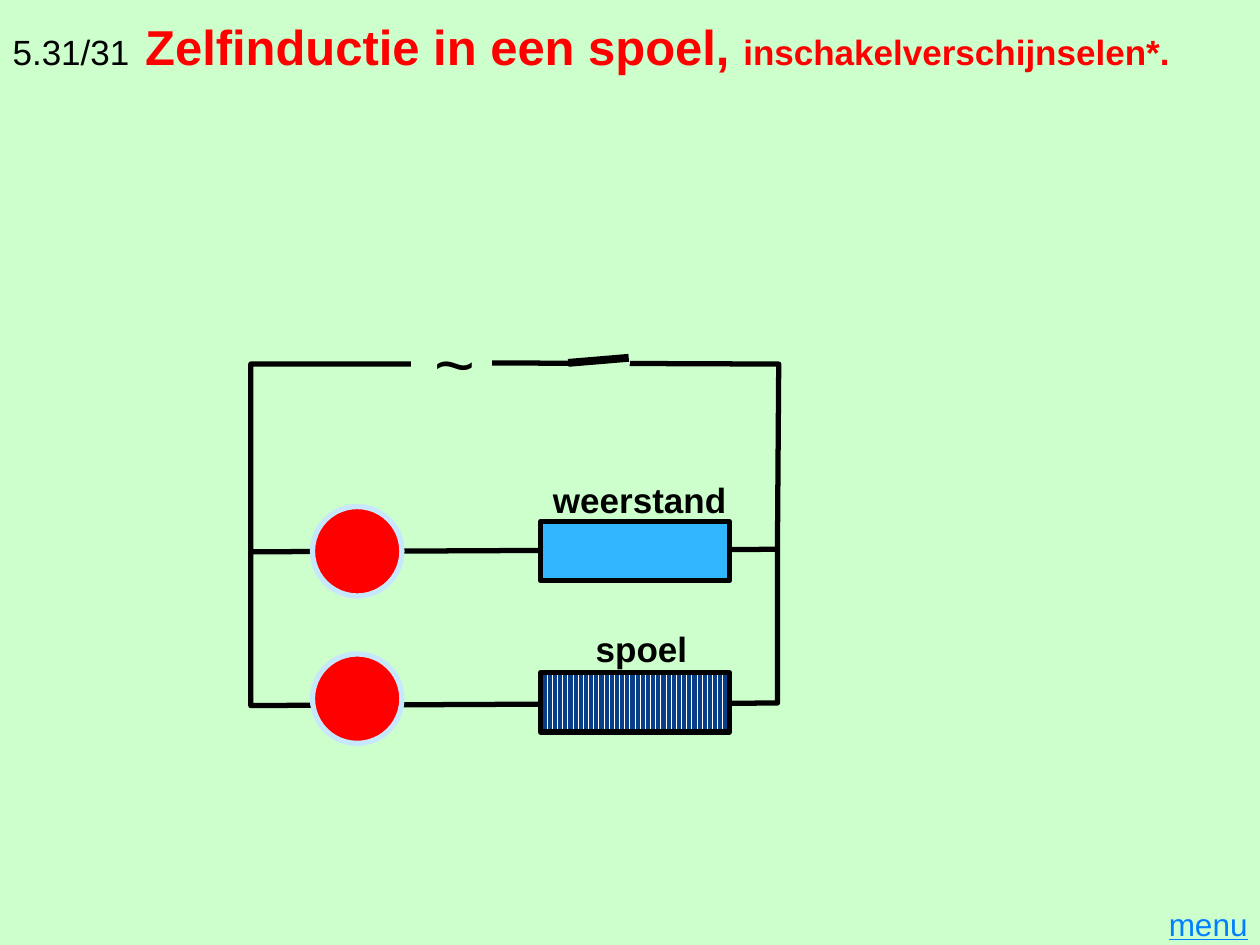
"""Builds a slide with a circuit of a resistor and a coil in parallel, each with its lamp."""
from lxml import etree
from pptx import Presentation, util as u
from pptx.dml import color
from pptx.enum import dml, shapes, text
from pptx.oxml import ns

INK, GROUND, RED, HALO = "000000", "CCFFCC", "FF0000", "C6E7FC"


def rgb(value):
    return color.RGBColor.from_string(value)


def finish(part, fill, line, width):
    part.shadow.inherit = False
    if fill:
        part.fill.solid()
        part.fill.fore_color.rgb = rgb(fill)
    else:
        part.fill.background()
    if line:
        part.line.color.rgb = rgb(line)
        part.line.width = u.Pt(width)
    else:
        part.line.fill.background()


deck = Presentation()
deck.slide_width, deck.slide_height = u.Inches(10), u.Inches(7.5)
slide = deck.slides.add_slide(deck.slide_layouts[5])
slide.background.fill.solid()
slide.background.fill.fore_color.rgb = rgb(GROUND)

left, right, top = 1.99, 6.17, 2.89
loops = [
    [(3.66, 2.88), (6.18, top), (right, 4.36), (left, 4.38), (left, top), (3.43, top)],
    [(left, 4.38), (left, 5.6), (right, 5.58), (right, 4.36)],
]
for loop in loops:
    start, *corners = [(u.Inches(x), u.Inches(y)) for x, y in loop]
    builder = slide.shapes.build_freeform(*start)
    builder.add_line_segments(corners, close=False)
    finish(builder.convert_to_shape(), None, INK, 3)

OVAL, BOX = shapes.MSO_SHAPE.OVAL, shapes.MSO_SHAPE.RECTANGLE
components = [
    (BOX, 4.29, 4.14, 1.5, 0.47, "31B6FD", INK, 3, 0),
    (BOX, 3.27, 2.1, 0.63, 1.5, GROUND, GROUND, 0.75, 0),
    (BOX, 4.52, 2.5, 0.48, 0.71, GROUND, None, 0, 3),
    (OVAL, 2.48, 5.19, 0.71, 0.71, RED, HALO, 3, 0),
    (OVAL, 2.48, 4.02, 0.71, 0.71, RED, HALO, 3, 0),
    (BOX, 4.29, 5.34, 1.5, 0.47, "073E87", INK, 3, 0),
]
for kind, x, y, width, height, fill, line, weight, turn in components:
    component = slide.shapes.add_shape(kind, *map(u.Inches, (x, y, width, height)))
    finish(component, fill, line, weight)
    component.rotation = turn

coil = component
coil.fill.patterned()
coil.fill.pattern = dml.MSO_PATTERN.DARK_VERTICAL
coil.fill.fore_color.rgb = rgb("073E87")
coil.fill.back_color.rgb = rgb("FFFFFF")

switch = slide.shapes.add_connector(
    shapes.MSO_CONNECTOR.STRAIGHT, *map(u.Inches, (4.51, 2.88, 4.99, 2.84)))
switch.line.color.rgb = rgb(INK)
switch.line.width = u.Pt(4.5)
etree.SubElement(switch.element.spPr, ns.qn("a:effectLst"))

LEFT, RIGHT = text.PP_ALIGN.LEFT, text.PP_ALIGN.RIGHT
TOP, MIDDLE = text.MSO_ANCHOR.TOP, text.MSO_ANCHOR.MIDDLE
labels = [
    ("~", 3.35, 2.49, 0.63, 0.77, 40, INK, False, LEFT, TOP),
    ("menu", 9.17, 7.13, 0.83, 0.4, 18, "0080FF", False, RIGHT, TOP),
    ("weerstand", 4.29, 3.77, 1.65, 0.39, 20, INK, True, LEFT, MIDDLE),
    ("spoel", 4.63, 4.95, 1.1, 0.39, 20, INK, True, LEFT, MIDDLE),
]
for wording, x, y, width, height, size, ink, bold, align, anchor in labels:
    frame = slide.shapes.add_textbox(*map(u.Inches, (x, y, width, height))).text_frame
    frame.word_wrap, frame.vertical_anchor = True, anchor
    label = frame.paragraphs[0]
    label.text, label.alignment = wording, align
    label.font.name, label.font.size, label.font.bold = "Arial", u.Pt(size), bold
    label.font.color.rgb = rgb(ink)
    label.font.underline = wording == "menu"

heading = slide.shapes.title
heading.left, heading.top = 0, 0
heading.width, heading.height = deck.slide_width, u.Inches(0.69)
heading.text_frame.vertical_anchor = MIDDLE
heading.text_frame.auto_size = text.MSO_AUTO_SIZE.NONE
headline = heading.text_frame.paragraphs[0]
headline.alignment = LEFT
headline.font.name = "Arial"
for wording, size, ink, bold in [
    ("5.31/31", 20, INK, False),
    (" ", 32, RED, True),
    ("Zelfinductie in een spoel, ", 28, RED, True),
    ("inschakelverschijnselen*.", 20, RED, True),
]:
    piece = headline.add_run()
    piece.text = wording
    piece.font.size, piece.font.bold = u.Pt(size), bold
    piece.font.color.rgb = rgb(ink)

deck.save("out.pptx")
